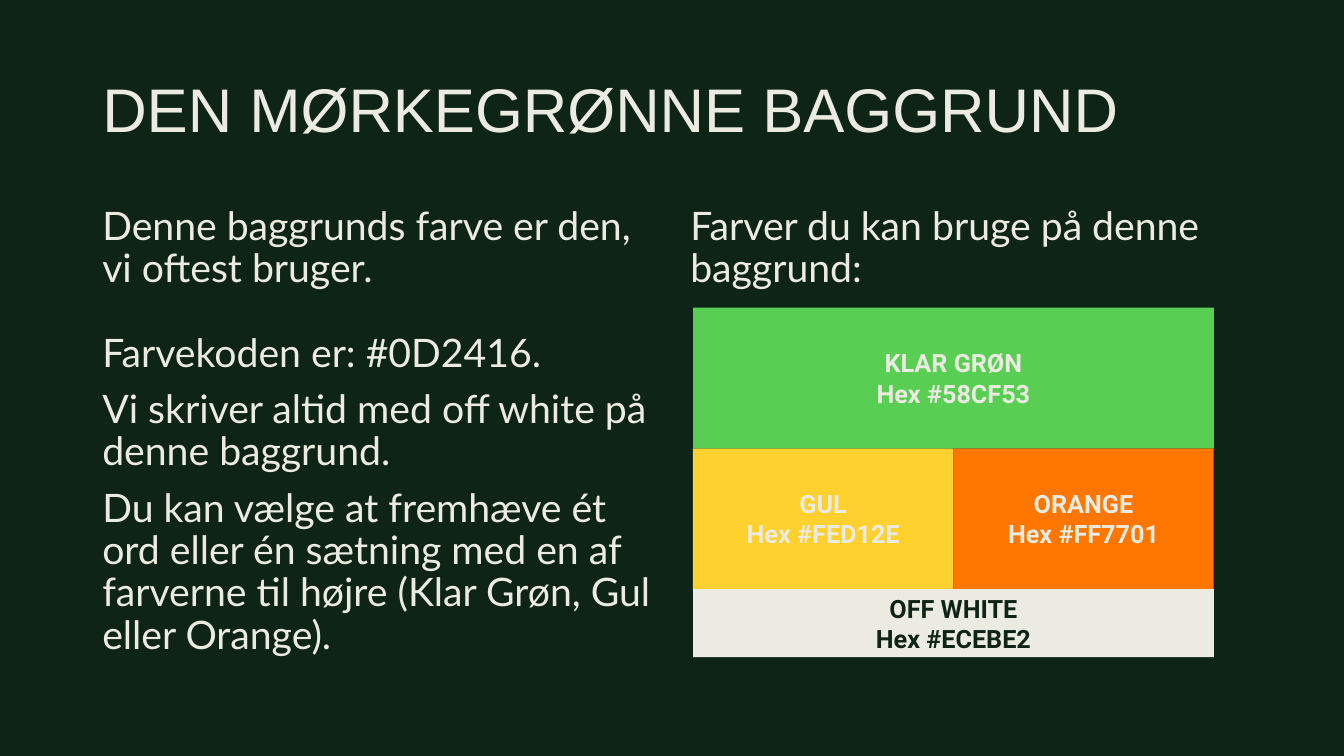
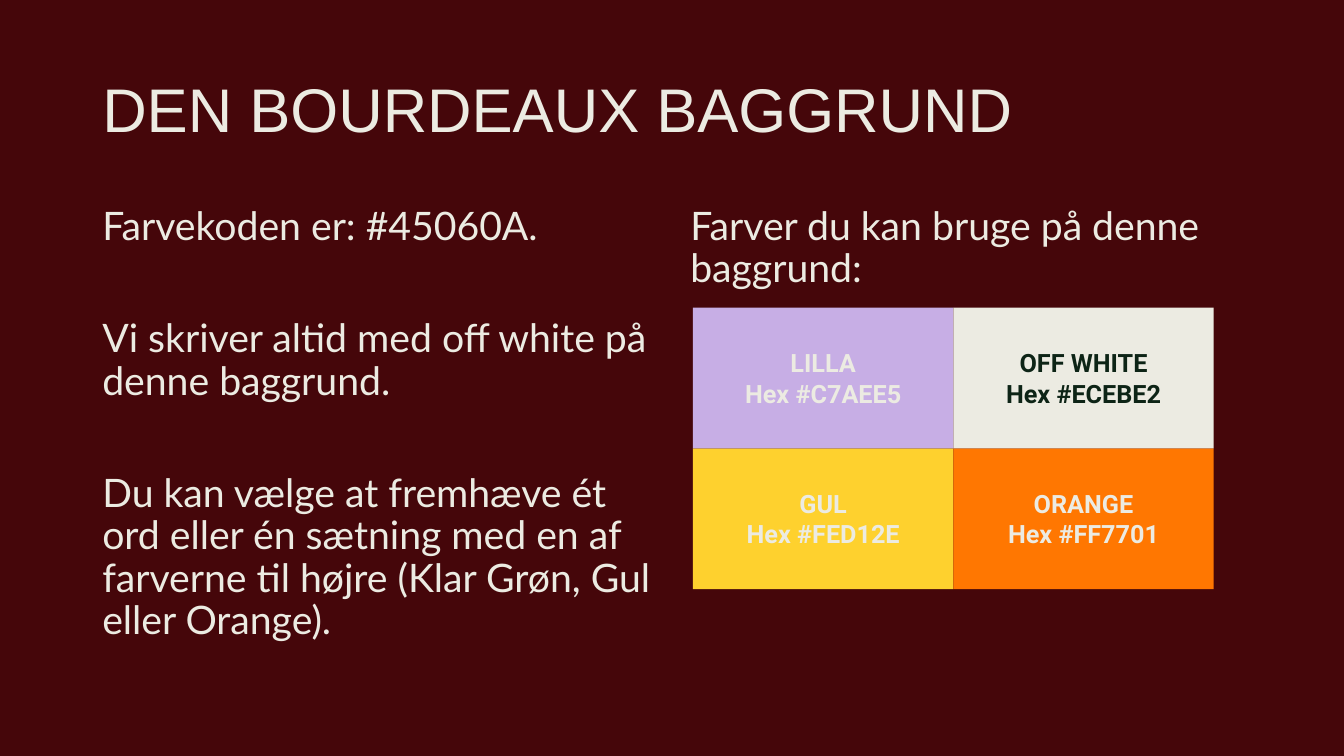
from pptx import Presentation, util as u
from pptx.dml.color import RGBColor
from pptx.enum import shapes, text

PX = 9525
WIDTH, HEIGHT = 1280, 720

DARK_GREEN = RGBColor(0x0D, 0x24, 0x16)
BORDEAUX = RGBColor(0x45, 0x06, 0x0A)
OFF_WHITE = RGBColor(0xEC, 0xEB, 0xE2)
GREEN = RGBColor(0x58, 0xCF, 0x53)
YELLOW = RGBColor(0xFE, 0xD1, 0x2E)
ORANGE = RGBColor(0xFF, 0x77, 0x01)
LILAC = RGBColor(0xC7, 0xAE, 0xE5)

LEFT, RIGHT, BODY_TOP = 88, 648, 192
COLUMN_W, COLUMN_H = 544, 457
GRID_LEFT, GRID_TOP = 660, 293
CELL_W, CELL_H, LOW_H = 248, 134, 65
BODY_GAP = 10

WRITE_RULE = "Vi skriver altid med off white på denne baggrund."
HIGHLIGHT_RULE = ("Du kan vælge at fremhæve ét ord eller én sætning med en af "
                  "farverne til højre (Klar Grøn, Gul eller Orange).")
PALETTE_INTRO = "Farver du kan bruge på denne baggrund:"


def px(*lengths):
    return [n * PX for n in lengths]


def add_run(p, content, font, size, color, bold=False):
    r = p.add_run()
    r.text = content
    r.font.name, r.font.size, r.font.bold = font, u.Pt(size), bold
    r.font.color.rgb = color


def add_textbox(s, x, y, w, h):
    tf = s.shapes.add_textbox(*px(x, y, w, h)).text_frame
    tf.word_wrap = True
    return tf


def add_title(s, content):
    tf = add_textbox(s, LEFT, 38, 1104, 139)
    tf.vertical_anchor = text.MSO_ANCHOR.MIDDLE
    p = tf.paragraphs[0]
    p.line_spacing = 0.9
    add_run(p, content, "Arial", 44, OFF_WHITE)


def add_body(s, x, paragraphs):
    """Write a column from (text, points of space before) pairs."""
    tf = add_textbox(s, x, BODY_TOP, COLUMN_W, COLUMN_H)
    for i, (content, gap) in enumerate(paragraphs):
        p = tf.add_paragraph() if i else tf.paragraphs[0]
        p.line_spacing, p.space_before = 0.9, u.Pt(gap)
        add_run(p, content, "Lato", 28, OFF_WHITE)


def add_swatch(s, name, color, col, row, span=1, height=CELL_H):
    """Place a named colour in the two-column palette grid."""
    sp = s.shapes.add_shape(
        shapes.MSO_SHAPE.RECTANGLE,
        *px(GRID_LEFT + col * CELL_W, GRID_TOP + row * CELL_H,
            span * CELL_W, height))
    sp.shadow.inherit = False
    sp.fill.solid()
    sp.fill.fore_color.rgb = color
    sp.line.fill.background()
    tf = sp.text_frame
    tf.word_wrap = True
    tf.vertical_anchor = text.MSO_ANCHOR.MIDDLE
    ink = DARK_GREEN if color == OFF_WHITE else OFF_WHITE
    for i, content in enumerate((name, f"Hex #{color}")):
        p = tf.add_paragraph() if i else tf.paragraphs[0]
        p.alignment = text.PP_ALIGN.CENTER
        add_run(p, content, "Roboto", 18, ink, bold=True)


def add_background_slide(prs, background, title, paragraphs, swatches):
    s = prs.slides.add_slide(prs.slide_layouts[6])
    s.background.fill.solid()
    s.background.fill.fore_color.rgb = background
    add_title(s, title)
    add_body(s, LEFT, paragraphs)
    add_body(s, RIGHT, [(PALETTE_INTRO, BODY_GAP)])
    shared = [("GUL", YELLOW, 0, 1), ("ORANGE", ORANGE, 1, 1)]
    for swatch in shared + swatches:
        add_swatch(s, *swatch)


def main():
    prs = Presentation()
    prs.slide_width, prs.slide_height = px(WIDTH, HEIGHT)
    add_background_slide(
        prs, DARK_GREEN, "DEN MØRKEGRØNNE BAGGRUND",
        [("Denne baggrunds farve er den, vi oftest bruger.", BODY_GAP),
         (f"Farvekoden er: #{DARK_GREEN}.", 30),
         (WRITE_RULE, BODY_GAP),
         (HIGHLIGHT_RULE, BODY_GAP)],
        [("KLAR GRØN", GREEN, 0, 0, 2),
         ("OFF WHITE", OFF_WHITE, 0, 2, 2, LOW_H)])
    add_background_slide(
        prs, BORDEAUX, "DEN BOURDEAUX BAGGRUND",
        [(f"Farvekoden er: #{BORDEAUX}.", BODY_GAP),
         (WRITE_RULE, 50),
         (HIGHLIGHT_RULE, 50)],
        [("LILLA", LILAC, 0, 0),
         ("OFF WHITE", OFF_WHITE, 1, 0)])
    prs.save("out.pptx")


if __name__ == "__main__":
    main()
